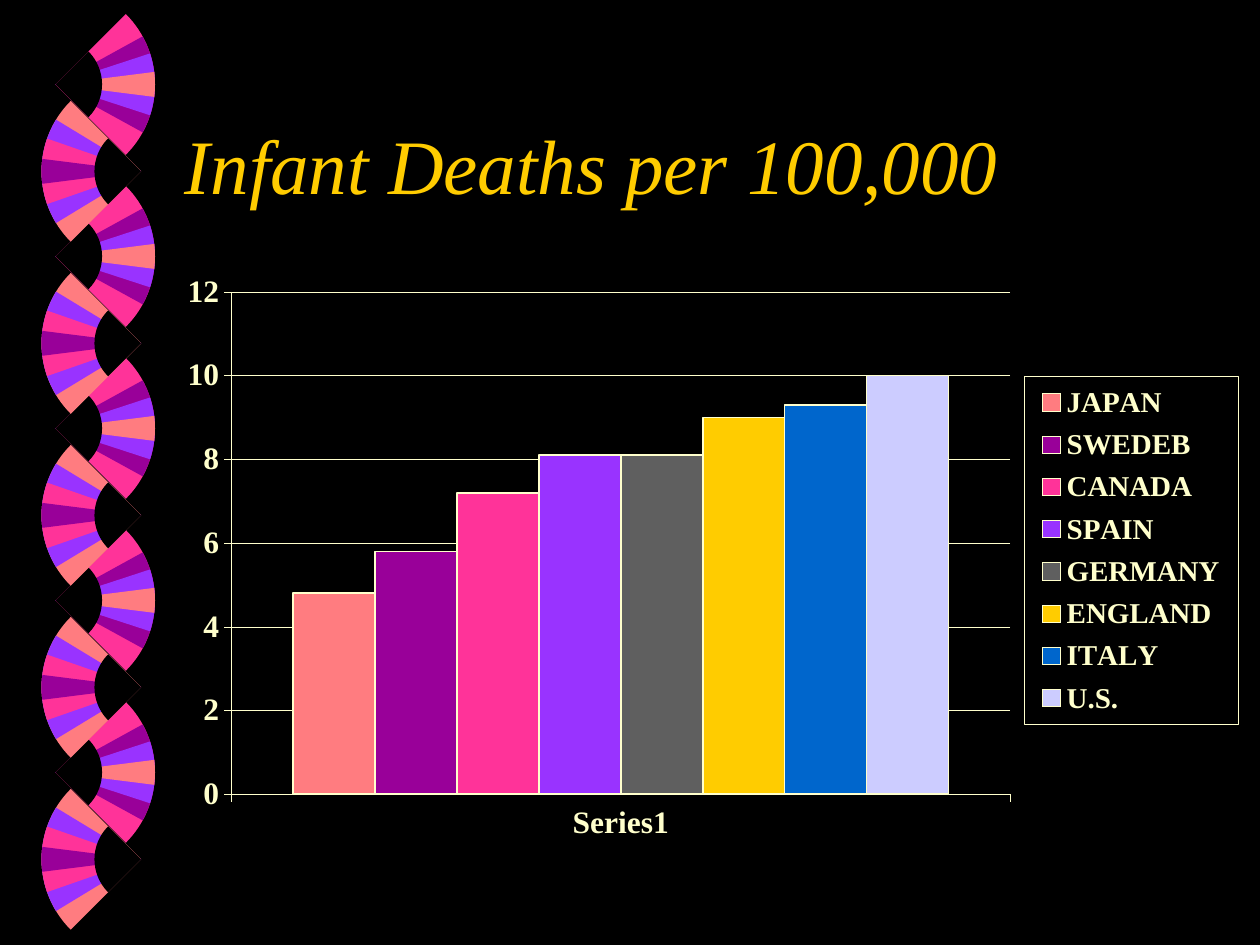
"""Build the infant deaths slide: a twisting ribbon, a title and a column chart."""
from math import cos, radians, sin, sqrt, tan

from lxml import etree
from pptx import Presentation
from pptx.chart.data import CategoryChartData
from pptx.dml.color import RGBColor
from pptx.enum.chart import XL_CHART_TYPE, XL_LEGEND_POSITION, XL_TICK_LABEL_POSITION, XL_TICK_MARK
from pptx.enum.text import MSO_ANCHOR
from pptx.oxml import parse_xml
from pptx.oxml.ns import nsdecls, qn
from pptx.util import Inches, Pt

COLUMN = XL_CHART_TYPE.COLUMN_CLUSTERED
RIGHT = XL_LEGEND_POSITION.RIGHT
LOW = XL_TICK_LABEL_POSITION.LOW
OUTSIDE, NO_TICK = XL_TICK_MARK.OUTSIDE, XL_TICK_MARK.NONE
MIDDLE = MSO_ANCHOR.MIDDLE

TITLE = "Infant Deaths per 100,000"
CATEGORY = "Series1"
DEATHS = [
    ("JAPAN", 4.8, "salmon"),
    ("SWEDEB", 5.8, "purple"),
    ("CANADA", 7.2, "pink"),
    ("SPAIN", 8.1, "violet"),
    ("GERMANY", 8.1, "gray"),
    ("ENGLAND", 9, "gold"),
    ("ITALY", 9.3, "blue"),
    ("U.S.", 10, "lavender"),
]
THEME = {
    "font": "Times New Roman",
    "title_size": 44, "axis_size": 18, "legend_size": 16.6,
    "hairline": 0.25, "outline": 1,
    "black": "000000", "cream": "FFFFCC", "gold": "FFCC00", "salmon": "FF7C80",
    "purple": "990099", "pink": "FF3399", "violet": "9933FF", "gray": "5F5F5F",
    "blue": "0066CC", "lavender": "CCCCFF",
}
FANS = [
    {"side": 1, "apex": (0.44, 0.67), "layers": [
        ("pink", 0.79, 45), ("purple", 0.79, 28.8), ("violet", 0.79, 18.1),
        ("salmon", 0.79, 7.2), ("black", 0.37, 45)]},
    {"side": -1, "apex": (1.12, 1.36), "layers": [
        ("salmon", 0.79, 45), ("violet", 0.79, 31.3), ("pink", 0.79, 19.2),
        ("purple", 0.79, 7.2), ("black", 0.37, 45)]},
]
FAN_COUNT, FAN_PITCH = 5, 1.365
TITLE_BOX = (1.37, 0.67, 8.5, 1.25)
CHART_BOX = (1.37, 2.17, 8.5, 4.5)
PLOT_AREA = (0.055, 0.033, 0.727, 0.896)
LEGEND_AREA = (0.795, 0.184, 0.2, 0.62)


def rgb(name):
    """Return a theme colour."""
    return RGBColor.from_string(THEME[name])


def set_font(font, size, color, bold=False, italic=False):
    """Apply the theme font with the given size and colour."""
    font.name, font.size = THEME["font"], Pt(THEME[size])
    font.bold, font.italic = bold, italic
    font.color.rgb = rgb(color)


def set_line(line, width):
    """Draw a line in cream."""
    line.color.rgb = rgb("cream")
    line.width = Pt(THEME[width])


def bend_arc(element):
    """Turn the last three segments of a freeform into one Bezier curve."""
    segments = list(element.iter(qn("a:lnTo")))[1:4]
    curve = etree.Element(qn("a:cubicBezTo"))
    segments[0].addprevious(curve)
    for segment in segments:
        curve.append(segment[0])
        segment.getparent().remove(segment)


def add_wedge(s, apex, side, color, radius, half_angle):
    """Add a circular sector that opens sideways from its apex."""
    start, end = radians(45 - half_angle), radians(45 + half_angle)
    size = radius * cos(start)
    corner_x = apex[0] + side * size * (1 / sqrt(2) - 0.5)
    corner_y = apex[1] + size / 2
    pull = 4 / 3 * tan((end - start) / 4)
    arc = [(cos(a) - k * sin(a), sin(a) + k * cos(a))
           for a, k in ((start, 0), (start, pull), (end, -pull), (end, 0))]
    builder = s.shapes.build_freeform(Inches(corner_x), Inches(corner_y))
    builder.add_line_segments([(Inches(corner_x + side * radius * x),
                                Inches(corner_y - radius * y)) for x, y in arc])
    sp = builder.convert_to_shape()
    bend_arc(sp._element)
    sp._element.remove(sp._element.find(qn("p:style")))
    sp.rotation = 45 * side % 360
    sp.shadow.inherit = False
    sp.fill.solid()
    sp.fill.fore_color.rgb = rgb(color)
    sp.line.fill.background()


def add_ribbon(s):
    """Stack the fans down both sides of the ribbon."""
    for fan in FANS:
        x, y = fan["apex"]
        for i in range(FAN_COUNT):
            for layer in fan["layers"]:
                add_wedge(s, (x, y + i * FAN_PITCH), fan["side"], *layer)


def add_title(s):
    """Add the slide title."""
    tf = s.shapes.add_textbox(*map(Inches, TITLE_BOX)).text_frame
    tf.word_wrap, tf.vertical_anchor = True, MIDDLE
    tf.text = TITLE
    set_font(tf.paragraphs[0].runs[0].font, "title_size", "gold", italic=True)


def manual_layout(area, inner=False):
    """Return a layout element for fractions of the chart."""
    target = '<c:layoutTarget val="inner"/>' if inner else ""
    modes = "".join(f'<c:{k}Mode val="edge"/>' for k in "xy")
    sizes = "".join(f'<c:{k} val="{v}"/>' for k, v in zip("xywh", area))
    return parse_xml(f'<c:layout {nsdecls("c")}><c:manualLayout>{target}{modes}{sizes}'
                     "</c:manualLayout></c:layout>")


def drop_layout(element):
    """Remove an automatic layout."""
    for layout in element.findall(qn("c:layout")):
        element.remove(layout)


def place_parts(chart):
    """Fix the plot and legend areas, frame the legend and clear the background."""
    frame = chart._chartSpace.find(qn("c:chart"))
    frame.addnext(parse_xml(f'<c:spPr {nsdecls("c", "a")}><a:noFill/>'
                            "<a:ln><a:noFill/></a:ln></c:spPr>"))
    plot_area, legend = frame.find(qn("c:plotArea")), frame.find(qn("c:legend"))
    drop_layout(plot_area)
    plot_area.insert(0, manual_layout(PLOT_AREA, inner=True))
    drop_layout(legend)
    legend.find(qn("c:legendPos")).addnext(manual_layout(LEGEND_AREA))
    legend.find(qn("c:txPr")).addprevious(parse_xml(
        f'<c:spPr {nsdecls("c", "a")}><a:noFill/><a:ln w="{Pt(THEME["hairline"])}">'
        f'<a:solidFill><a:srgbClr val="{THEME["cream"]}"/></a:solidFill></a:ln></c:spPr>'))


def add_deaths_chart(s):
    """Add the column chart with one series per country."""
    data = CategoryChartData()
    data.categories = [CATEGORY]
    for country, deaths, _ in DEATHS:
        data.add_series(country, [deaths])
    chart = s.shapes.add_chart(COLUMN, *map(Inches, CHART_BOX), data).chart
    chart.has_title = False
    set_font(chart.font, "axis_size", "cream", bold=True)
    plot = chart.plots[0]
    plot.gap_width, plot.overlap, plot.vary_by_categories = 150, 0, False
    for series, (_, _, color) in zip(plot.series, DEATHS):
        series.format.fill.solid()
        series.format.fill.fore_color.rgb = rgb(color)
        set_line(series.format.line, "outline")
    for axis in (chart.category_axis, chart.value_axis):
        set_font(axis.tick_labels.font, "axis_size", "cream", bold=True)
        set_line(axis.format.line, "hairline")
        axis.major_tick_mark, axis.minor_tick_mark = OUTSIDE, NO_TICK
    chart.category_axis.tick_label_position = LOW
    values = chart.value_axis
    values.minimum_scale, values.maximum_scale, values.major_unit = 0, 12, 2
    set_line(values.major_gridlines.format.line, "hairline")
    chart.has_legend = True
    chart.legend.position, chart.legend.include_in_layout = RIGHT, False
    set_font(chart.legend.font, "legend_size", "cream", bold=True)
    place_parts(chart)


def main():
    """Build and save the slide."""
    prs = Presentation()
    prs.slide_width, prs.slide_height = Inches(10), Inches(7.5)
    s = prs.slides.add_slide(prs.slide_layouts[6])
    s.background.fill.solid()
    s.background.fill.fore_color.rgb = rgb("black")
    add_ribbon(s)
    add_title(s)
    add_deaths_chart(s)
    prs.save("out.pptx")


if __name__ == "__main__":
    main()
